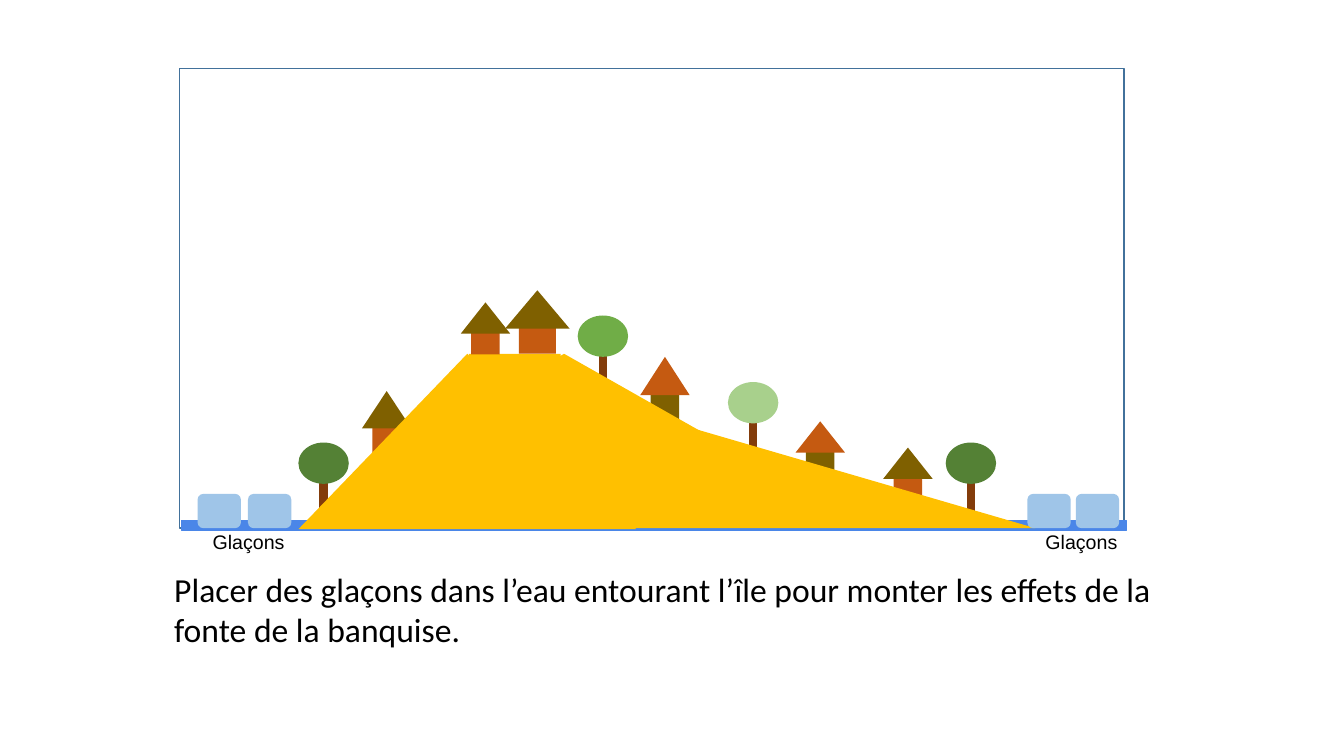
from lxml import etree
from pptx import Presentation
from pptx.dml.color import RGBColor
from pptx.enum.shapes import MSO_CONNECTOR, MSO_SHAPE
from pptx.oxml.ns import qn
from pptx.util import Inches, Pt

RECTANGLE = MSO_SHAPE.RECTANGLE
ROUNDED = MSO_SHAPE.ROUNDED_RECTANGLE
TRIANGLE = MSO_SHAPE.ISOSCELES_TRIANGLE
OVAL = MSO_SHAPE.OVAL
STRAIGHT = MSO_CONNECTOR.STRAIGHT

BLACK = RGBColor(0x00, 0x00, 0x00)
FRAME_BLUE = RGBColor(0x42, 0x71, 0x9B)
SAND = RGBColor(0xFF, 0xC0, 0x00)
SEA = RGBColor(0x4A, 0x86, 0xE8)
ICE = RGBColor(0x9F, 0xC5, 0xE8)
TRUNK = RGBColor(0x83, 0x3C, 0x0B)
DARK_GREEN = RGBColor(0x54, 0x81, 0x35)
GREEN = RGBColor(0x70, 0xAD, 0x47)
PALE_GREEN = RGBColor(0xA8, 0xD0, 0x8C)
BRICK = RGBColor(0xC5, 0x5A, 0x11)
OLIVE = RGBColor(0x7F, 0x60, 0x00)


def add_block(shapes, kind, left, top, width, height, fill=None, line=None, weight=1):
    shape = shapes.add_shape(kind, Inches(left), Inches(top), Inches(width), Inches(height))
    shape.shadow.inherit = False
    if fill is None:
        shape.fill.background()
    else:
        shape.fill.solid()
        shape.fill.fore_color.rgb = fill
    if line is None:
        shape.line.fill.background()
    else:
        shape.line.color.rgb = line
        shape.line.width = Pt(weight)
    return shape


def add_tree(slide, left, top, leaves):
    shapes = slide.shapes.add_group_shape().shapes
    middle = Inches(left + 0.25)
    trunk = shapes.add_connector(STRAIGHT, middle, Inches(top + 0.72), middle, Inches(top + 0.1))
    trunk.line.color.rgb = TRUNK
    trunk.line.width = Pt(6)
    etree.SubElement(trunk._element.spPr, qn("a:effectLst"))
    add_block(shapes, OVAL, left, top, 0.5, 0.41, leaves)


def add_house(slide, left, top, width, roof_height, roof, wall):
    shapes = slide.shapes.add_group_shape().shapes
    wall_width = 0.575 * width
    wall_left = left + (width - wall_width) / 2
    add_block(shapes, RECTANGLE, wall_left, top + 0.63 * roof_height,
              wall_width, roof_height + 0.01, wall)
    add_block(shapes, TRIANGLE, left, top, width, roof_height, roof)


def add_text(slide, text, left, top, width, height, font="Arial", size=14, color=BLACK):
    box = slide.shapes.add_textbox(Inches(left), Inches(top), Inches(width), Inches(height))
    frame = box.text_frame
    frame.word_wrap = True
    frame.margin_left = frame.margin_right = Inches(0.1)
    frame.margin_top = frame.margin_bottom = Inches(0.1)
    run = frame.paragraphs[0].add_run()
    run.text = text
    run.font.name = font
    run.font.size = Pt(size)
    run.font.color.rgb = color


def add_ice_cubes(slide, lefts, label_left):
    for left in lefts:
        add_block(slide.shapes, ROUNDED, left, 4.9, 0.43, 0.34, ICE)
    add_text(slide, "Glaçons", label_left, 5.16, 1.13, 0.44)


def main():
    presentation = Presentation()
    presentation.slide_width = Inches(13.33)
    presentation.slide_height = Inches(7.5)
    slide = presentation.slides.add_slide(presentation.slide_layouts[6])
    shapes = slide.shapes

    add_block(shapes, RECTANGLE, 1.78, 0.68, 9.37, 4.56, line=FRAME_BLUE)
    add_block(shapes, RECTANGLE, 4.31, 4.26, 2.33, 0.99, SAND)
    add_block(shapes, RECTANGLE, 4.65, 3.51, 0.91, 0.83, SAND)

    for left, top, leaves in [
        (9.38, 4.39, DARK_GREEN),
        (7.22, 3.79, PALE_GREEN),
        (2.96, 4.39, DARK_GREEN),
        (5.73, 3.13, GREEN),
    ]:
        add_tree(slide, left, top, leaves)

    for left, top, width, roof_height, roof, wall in [
        (8.76, 4.44, 0.49, 0.31, OLIVE, BRICK),
        (7.89, 4.18, 0.49, 0.31, BRICK, OLIVE),
        (4.57, 3.0, 0.49, 0.31, OLIVE, BRICK),
        (5.01, 2.88, 0.64, 0.38, OLIVE, BRICK),
        (3.59, 3.88, 0.49, 0.37, OLIVE, BRICK),
        (6.35, 3.54, 0.49, 0.38, BRICK, OLIVE),
    ]:
        add_house(slide, left, top, width, roof_height, roof, wall)

    add_block(shapes, TRIANGLE, 3.85, 3.51, 3.49, 0.99, SAND)
    add_block(shapes, RECTANGLE, 1.8, 5.16, 9.37, 0.1, SEA, line=SEA, weight=0.75)
    add_block(shapes, TRIANGLE, 2.96, 3.51, 3.35, 1.74, SAND)
    add_block(shapes, TRIANGLE, 3.48, 4.25, 6.79, 0.99, SAND)

    add_text(slide, "Placer des glaçons dans l’eau entourant l’île pour monter "
             "les effets de la fonte de la banquise.",
             1.63, 5.54, 9.93, 1.41, font="Calibri", size=24)
    add_ice_cubes(slide, (2.46, 1.96), 2.01)
    add_ice_cubes(slide, (10.19, 10.67), 10.27)

    presentation.save("out.pptx")


if __name__ == "__main__":
    main()
